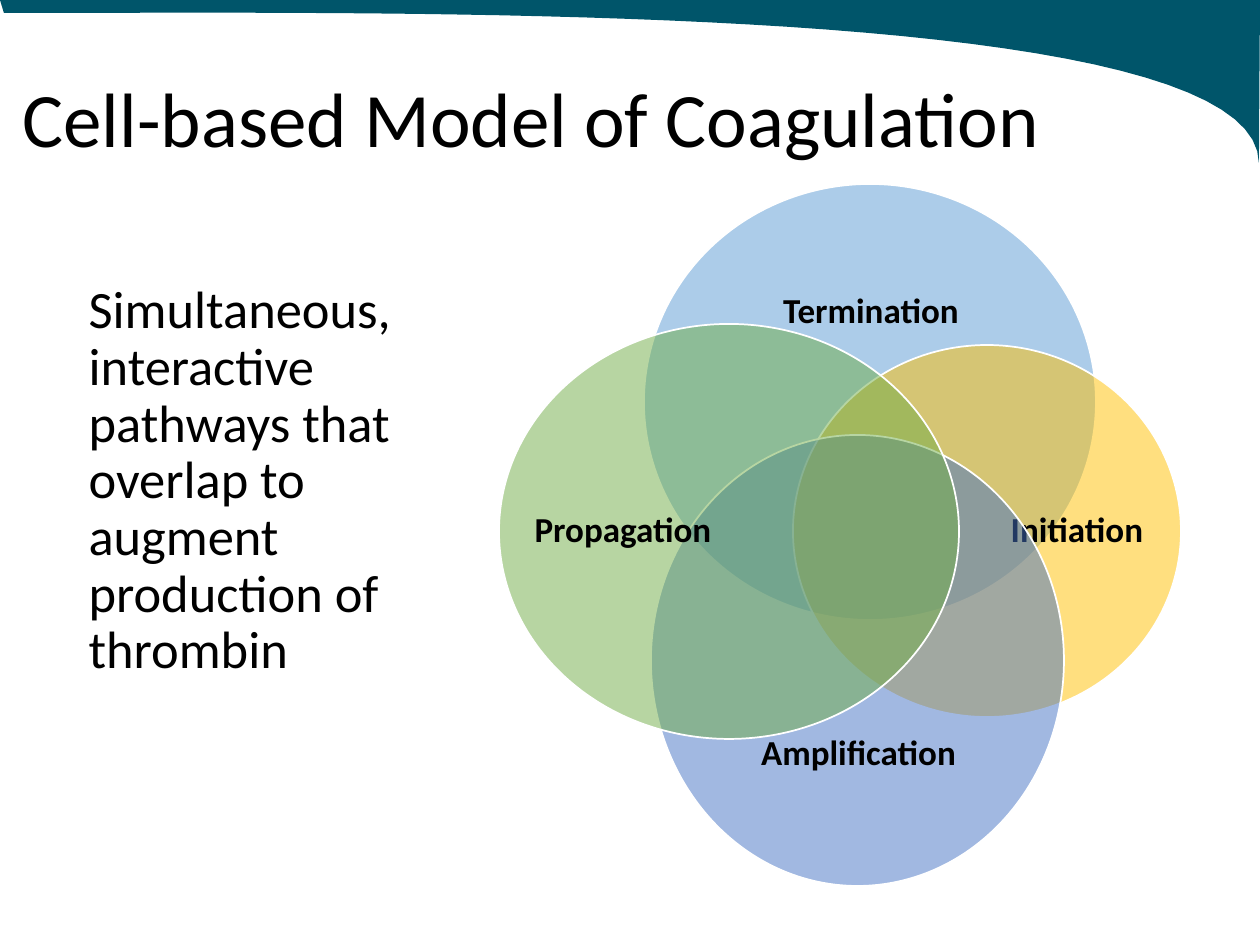
"""Build the cell-based coagulation slide with its four-circle diagram."""
from dataclasses import dataclass

from lxml import etree
from pptx import Presentation
from pptx.dml.color import RGBColor
from pptx.enum import shapes, text
from pptx.oxml import ns
from pptx.util import Pt


@dataclass(frozen=True)
class Theme:
    font: str = "Calibri"
    ink: str = "000000"
    white: str = "FFFFFF"
    swoosh: str = "00556A"
    blue: str = "5B9BD5"
    gold: str = "FFC000"
    indigo: str = "4472C4"
    green: str = "70AD47"
    title_size: int = 44
    body_size: int = 30
    label_size: int = 20


theme = Theme()


def px(*values):
    return [round(v * 914400 / 126) for v in values]


def write(sp, content, size, bold=False, align=text.PP_ALIGN.LEFT,
          anchor=text.MSO_ANCHOR.MIDDLE, inset=None):
    tf = sp.text_frame
    tf.word_wrap = True
    tf.auto_size = text.MSO_AUTO_SIZE.NONE
    tf.vertical_anchor = anchor
    if inset is not None:
        tf.margin_left = tf.margin_top = tf.margin_right = tf.margin_bottom = inset
    p = tf.paragraphs[0]
    p.alignment = align
    p.line_spacing = 0.9
    p.space_before = Pt(0)
    r = p.add_run()
    r.text = content
    r.font.name = theme.font
    r.font.size = Pt(size)
    r.font.bold = bold
    r.font.color.rgb = RGBColor.from_string(theme.ink)
    return p


prs = Presentation()
prs.slide_width, prs.slide_height = px(1260, 945)
s = prs.slides.add_slide(prs.slide_layouts[1])
title, body = s.placeholders

curves = [
    [(1260, 0), (1260, 18), (1259, 145), (1259, 163)],
    [(1259, 163), (1257, 0), (423, 13), (4, 13)],
]
steps = 40
outline = [(1260, 0)]
for a, b, c, d in curves:
    for i in range(1, steps + 1):
        t = i / steps
        outline.append([(1 - t) ** 3 * a[k] + 3 * (1 - t) ** 2 * t * b[k]
                        + 3 * (1 - t) * t ** 2 * c[k] + t ** 3 * d[k]
                        for k in (0, 1)])
builder = s.shapes.build_freeform(0, 0)
builder.add_line_segments([px(*point) for point in outline])
swoosh = builder.convert_to_shape()
swoosh.shadow.inherit = False
swoosh.fill.solid()
swoosh.fill.fore_color.rgb = RGBColor.from_string(theme.swoosh)
swoosh.line.fill.background()
s.shapes._spTree.insert(2, swoosh._element)

title.left, title.top, title.width, title.height = px(10, 30, 1144, 185)
write(title, "Cell-based Model of Coagulation", theme.title_size)

body.left, body.top, body.width, body.height = px(76, 277, 397, 458)
p = write(body, "Simultaneous, interactive pathways that overlap to augment "
          "production of thrombin", theme.body_size, anchor=text.MSO_ANCHOR.TOP)
pPr = p._p.get_or_add_pPr()
pPr.set("marL", "0")
pPr.set("indent", "0")
etree.SubElement(pPr, ns.qn("a:buNone"))

phases = [
    ("Termination", theme.blue, (644, 184, 452, 436), (697, 243, 348, 139)),
    ("Initiation", theme.gold, (793, 345, 388, 372), (1002, 388, 150, 286)),
    ("Amplification", theme.indigo, (651, 435, 413, 451), (699, 682, 319, 144)),
    ("Propagation", theme.green, (499, 324, 460, 415), (534, 372, 178, 319)),
]
diagram = s.shapes.add_group_shape()
for name, color, circle_box, label_box in phases:
    circle = diagram.shapes.add_shape(shapes.MSO_SHAPE.OVAL, *px(*circle_box))
    circle.shadow.inherit = False
    circle.fill.solid()
    circle.fill.fore_color.rgb = RGBColor.from_string(color)
    rgb = circle._element.spPr.find(ns.qn("a:solidFill"))[0]
    etree.SubElement(rgb, ns.qn("a:alpha"), val="50000")
    circle.line.color.rgb = RGBColor.from_string(theme.white)
    circle.line.width = Pt(1)
    label = diagram.shapes.add_textbox(*px(*label_box))
    write(label, name, theme.label_size, bold=True,
          align=text.PP_ALIGN.CENTER, inset=0)

prs.save("out.pptx")
